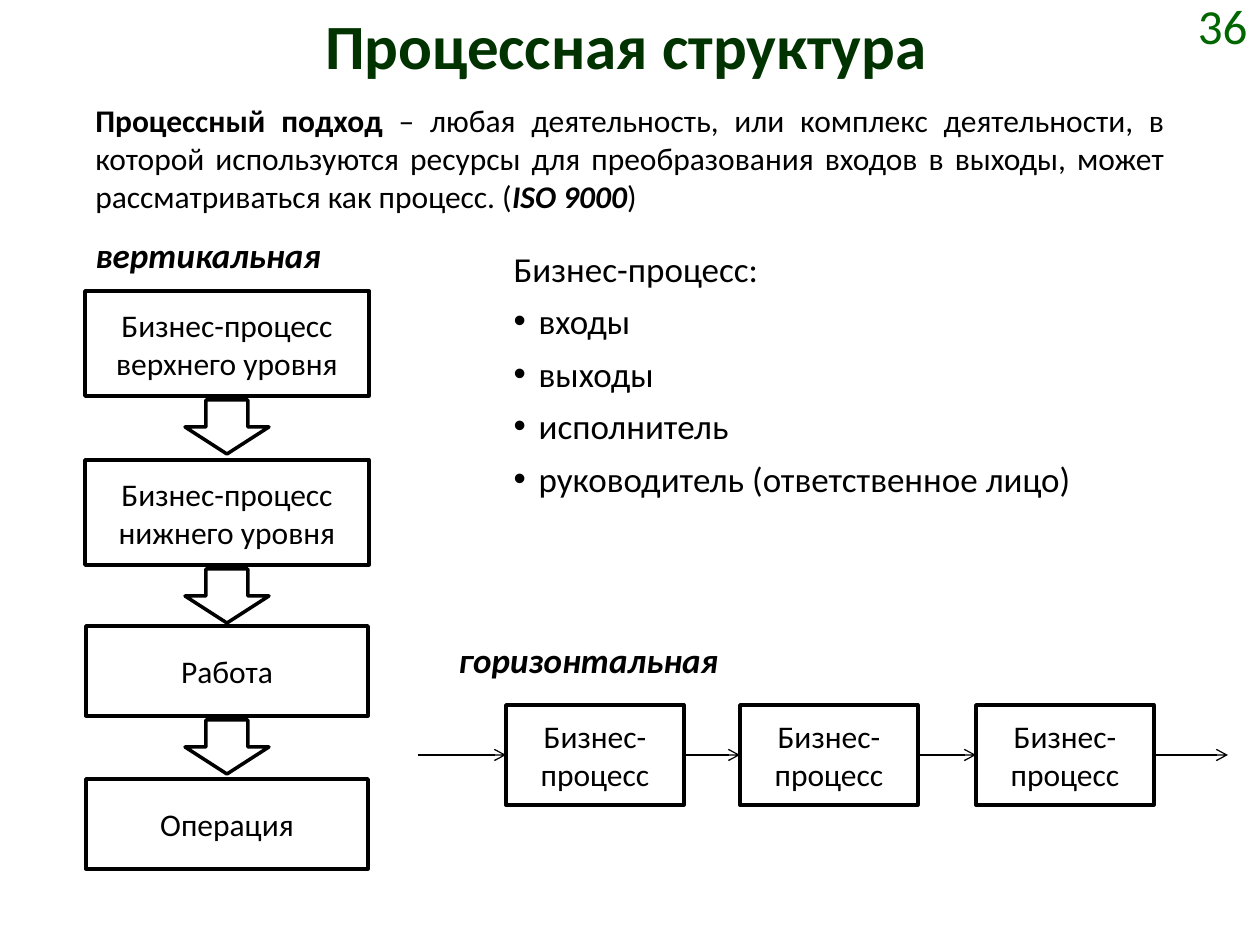
import pptx
import pptx.util
import pptx.dml.color
import pptx.enum.shapes
import pptx.enum.text
from dataclasses import dataclass
from lxml import etree

SCALE = 914400 / 126  # EMU in one px
NS = "http://schemas.openxmlformats.org/drawingml/2006/main"
SHAPE = pptx.enum.shapes.MSO_SHAPE
ALIGN = pptx.enum.text.PP_ALIGN
ANCHOR = pptx.enum.text.MSO_ANCHOR
NOFIT = pptx.enum.text.MSO_AUTO_SIZE.NONE


@dataclass
class Theme:
    face: str = "Calibri"
    title: str = "003300"
    page: str = "006600"
    ink: str = "000000"
    paper: str = "FFFFFF"
    head: int = 36
    num: int = 28
    list: int = 20
    body: int = 18


theme = Theme()
rgb = pptx.dml.color.RGBColor.from_string


def px(*nums):
    return [pptx.util.Emu(round(n * SCALE)) for n in nums]


def style(para, size, color, align, bold=False, slant=False, before=0):
    para.alignment = align
    para.space_before = pptx.util.Pt(before)
    font = para.font
    font.name, font.size = theme.face, pptx.util.Pt(size)
    font.bold, font.italic = bold, slant
    font.color.rgb = rgb(color)


deck = pptx.Presentation()
deck.slide_width, deck.slide_height = px(1260, 945)
slide = deck.slides.add_slide(deck.slide_layouts[1])
shapes = slide.shapes

# Title
title = shapes.title
title.left, title.top, title.width, title.height = px(59, 0, 1134, 118)
frame = title.text_frame
frame.text = "Процессная структура"
frame.auto_size, frame.vertical_anchor = NOFIT, ANCHOR.TOP
style(frame.paragraphs[0], theme.head, theme.title, ALIGN.CENTER, bold=True)

# Page number
frame = shapes.add_textbox(*px(1131, 0, 129, 49)).text_frame
frame.word_wrap, frame.vertical_anchor = True, ANCHOR.MIDDLE
frame.text = "36"
style(frame.paragraphs[0], theme.num, theme.page, ALIGN.RIGHT)

# Definition
frame = shapes.add_textbox(*px(83, 95, 1094, 127)).text_frame
frame.word_wrap = True
para = frame.paragraphs[0]
style(para, theme.body, theme.ink, ALIGN.JUSTIFY, before=12)
for text, bold, slant in [
    ("Процессный подход ", True, False),
    ("– любая деятельность, или комплекс деятельности, в которой используются "
     "ресурсы для преобразования входов в выходы, может рассматриваться как "
     "процесс. (", False, False),
    ("ISO 9000", True, True),
    (")", False, False),
]:
    run = para.add_run()
    run.text = text
    run.font.bold, run.font.italic = bold, slant

# Diagram labels
for text, left, top in [("вертикальная", 83, 227), ("горизонтальная", 446, 632)]:
    frame = shapes.add_textbox(*px(left, top, 286, 55)).text_frame
    frame.word_wrap = True
    frame.text = text
    style(frame.paragraphs[0], theme.list, theme.ink, ALIGN.JUSTIFY, True, True, 12)

# Process parts list
body = slide.placeholders[1]
body.left, body.top, body.width, body.height = px(501, 241, 644, 267)
frame = body.text_frame
frame.text = "Бизнес-процесс:\nвходы\nвыходы\nисполнитель\nруководитель (ответственное лицо)"
frame.auto_size, frame.vertical_anchor = NOFIT, ANCHOR.TOP
for i, para in enumerate(frame.paragraphs):
    para.space_before = pptx.util.Pt(6)
    props = para._p.get_or_add_pPr()
    dent = px(25)[0] if i else 0
    props.set("marL", str(dent))
    props.set("indent", str(-dent))
    if i:
        etree.SubElement(props, f"{{{NS}}}buChar", char="•")
    else:
        etree.SubElement(props, f"{{{NS}}}buNone")
    style(para, theme.list, theme.ink, ALIGN.JUSTIFY, before=6)

# Boxes and block arrows: vertical levels, then horizontal chain
ARROW = (84, 54)
levels = [
    ("Бизнес-процесс верхнего уровня", 85, 291, 284, 105),
    ("Бизнес-процесс нижнего уровня", 85, 460, 284, 105),
    ("Работа", 86, 626, 282, 90),
    ("Операция", 86, 779, 282, 90),
]
parts = [(SHAPE.RECTANGLE, *level) for level in levels]
for text, left, top, width, height in levels[:-1]:
    mid = left + width // 2
    parts.append((SHAPE.DOWN_ARROW, "", mid - ARROW[0] // 2, top + height + 4, *ARROW))
parts += [(SHAPE.RECTANGLE, "Бизнес-процесс", left, 705, 178, 100)
          for left in (506, 740, 976)]

drawn = []
for kind, text, *place in parts:
    box = shapes.add_shape(kind, *px(*place))
    box.shadow.inherit = False
    box.fill.solid()
    box.fill.fore_color.rgb = rgb(theme.paper)
    box.line.color.rgb = rgb(theme.ink)
    box.line.width = pptx.util.Pt(2)
    if text:
        frame = box.text_frame
        frame.margin_left = frame.margin_right = 0
        frame.margin_top = frame.margin_bottom = 0
        frame.word_wrap, frame.vertical_anchor = True, ANCHOR.MIDDLE
        frame.text = text
        style(frame.paragraphs[0], theme.body, theme.ink, ALIGN.CENTER)
    drawn.append(box)

# Flow through the chain
chain = drawn[-3:]
for start, end in zip([None, *chain], [*chain, None]):
    line = shapes.add_connector(
        pptx.enum.shapes.MSO_CONNECTOR.STRAIGHT, *px(418, 755, 1228, 755))
    if start:
        line.begin_connect(start, 3)
    if end:
        line.end_connect(end, 1)
    line.line.color.rgb = rgb(theme.ink)
    line.line.width = pptx.util.Pt(0.75)
    etree.SubElement(line.line._get_or_add_ln(), f"{{{NS}}}tailEnd", type="arrow")
    etree.SubElement(line._element.spPr, f"{{{NS}}}effectLst")

deck.save("out.pptx")
